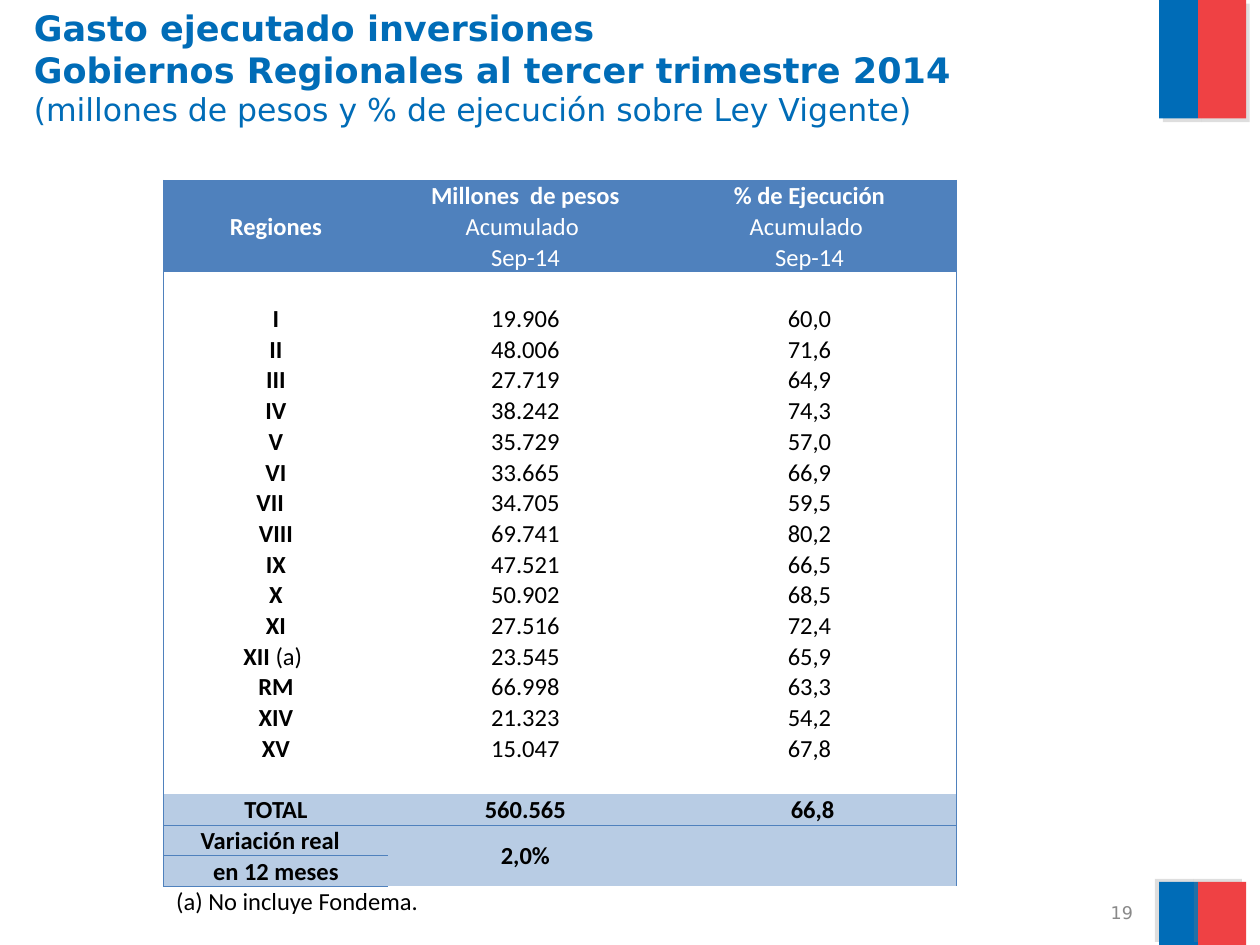
from lxml.etree import SubElement
from pptx import Presentation
from pptx.dml.color import RGBColor
from pptx.enum.shapes import MSO_SHAPE
from pptx.enum.text import MSO_ANCHOR, MSO_AUTO_SIZE, PP_ALIGN
from pptx.oxml.ns import qn
from pptx.util import Inches, Pt

FLAG_BLUE = RGBColor(0x00, 0x6C, 0xB7)
FLAG_RED = RGBColor(0xEF, 0x41, 0x44)
SHADOW_GRAY = RGBColor(0x80, 0x80, 0x80)
NUMBER_GRAY = RGBColor(0x89, 0x89, 0x89)
TABLE_BLUE = RGBColor(0x4F, 0x81, 0xBD)
TOTAL_BLUE = RGBColor(0xB8, 0xCC, 0xE4)
WHITE = RGBColor(0xFF, 0xFF, 0xFF)
BLACK = RGBColor(0, 0, 0)
NO_STYLE = "{2D5ABB26-0587-4C30-8999-92F81FD0307C}"

HEADER = [
    ("", "Millones  de pesos", "% de Ejecución"),
    ("Regiones", "Acumulado", "Acumulado"),
    ("", "Sep-14", "Sep-14"),
]
REGIONS = [
    ("I", "19.906", "60,0"),
    ("II", "48.006", "71,6"),
    ("III", "27.719", "64,9"),
    ("IV", "38.242", "74,3"),
    ("V", "35.729", "57,0"),
    ("VI", "33.665", "66,9"),
    ("VII", "34.705", "59,5"),
    ("VIII", "69.741", "80,2"),
    ("IX", "47.521", "66,5"),
    ("X", "50.902", "68,5"),
    ("XI", "27.516", "72,4"),
    ("XII (a)", "23.545", "65,9"),
    ("RM", "66.998", "63,3"),
    ("XIV", "21.323", "54,2"),
    ("XV", "15.047", "67,8"),
]
TOTALS = [
    ("TOTAL", "560.565", "66,8"),
    ("Variación real", "2,0%", ""),
    ("en 12 meses", "", ""),
]
BLANK_ROW = ("", "", "")
# Extra right margin that moves some centred labels to the left
RIGHT_SHIFT = {"VII": 0.09, "Variación real": 0.09, "XII (a)": 0.05, "Acumulado": 0.05}


def add_span(paragraph, text, font, size, color, bold=False):
    span = paragraph.add_run()
    span.text = text
    span.font.name = font
    span.font.size = Pt(size)
    span.font.bold = bold
    span.font.color.rgb = color


def add_border(cell, side):
    line = SubElement(cell._tc.get_or_add_tcPr(), qn(f"a:ln{side}"), w=str(Pt(0.5)))
    fill = SubElement(line, qn("a:solidFill"))
    SubElement(fill, qn("a:srgbClr"), val=str(TABLE_BLUE))


deck = Presentation()
deck.slide_width = Inches(10)
deck.slide_height = Inches(7.5)
page = deck.slides.add_slide(deck.slide_layouts[6])

# Flag bands in the right corners
for left, top, width, height, color, angle in [
    (9.2, -0.01, 0.31, 0.95, FLAG_BLUE, 45),
    (9.51, 0, 0.38, 0.94, FLAG_RED, 45),
    (9.2, 7, 0.31, 0.5, FLAG_BLUE, 215),
    (9.51, 7, 0.38, 0.5, FLAG_RED, 215),
]:
    band = page.shapes.add_shape(
        MSO_SHAPE.RECTANGLE, Inches(left), Inches(top), Inches(width), Inches(height))
    band.fill.solid()
    band.fill.fore_color.rgb = color
    band.line.fill.background()
    band.shadow.inherit = False
    effects = band._element.spPr.find(qn("a:effectLst"))
    shadow = SubElement(effects, qn("a:outerShdw"), dist=str(Pt(3)), dir=str(angle * 60000))
    shade = SubElement(shadow, qn("a:srgbClr"), val=str(SHADOW_GRAY))
    SubElement(shade, qn("a:alpha"), val="25000")

# Title
title = page.shapes.add_textbox(Inches(0.17), 0, Inches(9.24), Inches(1.25))
title.text_frame.word_wrap = True
heading = title.text_frame.paragraphs[0]
for text in ("Gasto ejecutado inversiones", "Gobiernos Regionales al tercer trimestre 2014"):
    add_span(heading, text, "DejaVu Sans", 20, FLAG_BLUE, bold=True)
    heading.add_line_break()
add_span(heading, "(millones de pesos y % de ejecución sobre Ley Vigente)",
         "DejaVu Sans", 18, FLAG_BLUE)

# Page number
number = page.shapes.add_textbox(Inches(6.76), Inches(7.14), Inches(2.33), Inches(0.21))
number.text_frame.word_wrap = True
number.text_frame.vertical_anchor = MSO_ANCHOR.MIDDLE
paragraph = number.text_frame.paragraphs[0]
paragraph.alignment = PP_ALIGN.RIGHT
add_span(paragraph, "19", "DejaVu Sans", 10, NUMBER_GRAY)

# Footnote
note = page.shapes.add_textbox(Inches(1.3), Inches(6.98), Inches(2.14), Inches(0.34))
note.text_frame.word_wrap = False
note.text_frame.auto_size = MSO_AUTO_SIZE.SHAPE_TO_FIT_TEXT
add_span(note.text_frame.paragraphs[0], "(a) No incluye Fondema.", "Calibri", 14, BLACK)

# Spending table
rows = HEADER + [BLANK_ROW] + REGIONS + [BLANK_ROW] + TOTALS
last_row = len(rows) - 1
total_row = len(rows) - len(TOTALS)
frame = page.shapes.add_table(
    len(rows), 3, Inches(1.3), Inches(1.43), Inches(6.3), Inches(5.54))
table = frame.table
table.first_row = False
table.horz_banding = False
table._tbl.tblPr.find(qn("a:tableStyleId")).text = NO_STYLE
for column, width in zip(table.columns, (1.78, 2.18, 2.33)):
    column.width = Inches(width)

for row_index, values in enumerate(rows):
    table.rows[row_index].height = Inches(0.24)
    in_header = row_index < len(HEADER)
    in_totals = row_index >= total_row
    for column_index, text in enumerate(values):
        cell = table.cell(row_index, column_index)
        cell.margin_left = cell.margin_top = Inches(0.01)
        cell.margin_right = Inches(0.01 + RIGHT_SHIFT.get(text, 0))
        cell.margin_bottom = 0
        cell.vertical_anchor = MSO_ANCHOR.BOTTOM

        if column_index == 0:
            add_border(cell, "L")
        if column_index == 2:
            add_border(cell, "R")
        if row_index in (0, total_row + 1):
            add_border(cell, "T")
        if row_index in (total_row, last_row):
            add_border(cell, "B")
        if in_header or in_totals:
            cell.fill.solid()
            cell.fill.fore_color.rgb = TABLE_BLUE if in_header else TOTAL_BLUE

        paragraph = cell.text_frame.paragraphs[0]
        paragraph.alignment = PP_ALIGN.CENTER
        color = WHITE if in_header else BLACK
        bold = row_index == 0 or column_index == 0 or in_totals
        if not text:
            SubElement(paragraph._p, qn("a:endParaRPr"), sz="1400")
        elif text.endswith(" (a)"):
            add_span(paragraph, text.removesuffix("(a)"), "Calibri", 14, color, bold)
            add_span(paragraph, "(a)", "Calibri", 14, color)
        else:
            add_span(paragraph, text, "Calibri", 14, color, bold)

table.cell(total_row, 2).margin_left = Inches(0.06)
for column_index in (1, 2):
    variation = table.cell(total_row + 1, column_index)
    variation.merge(table.cell(last_row, column_index))
    variation.vertical_anchor = MSO_ANCHOR.MIDDLE

deck.save("out.pptx")
